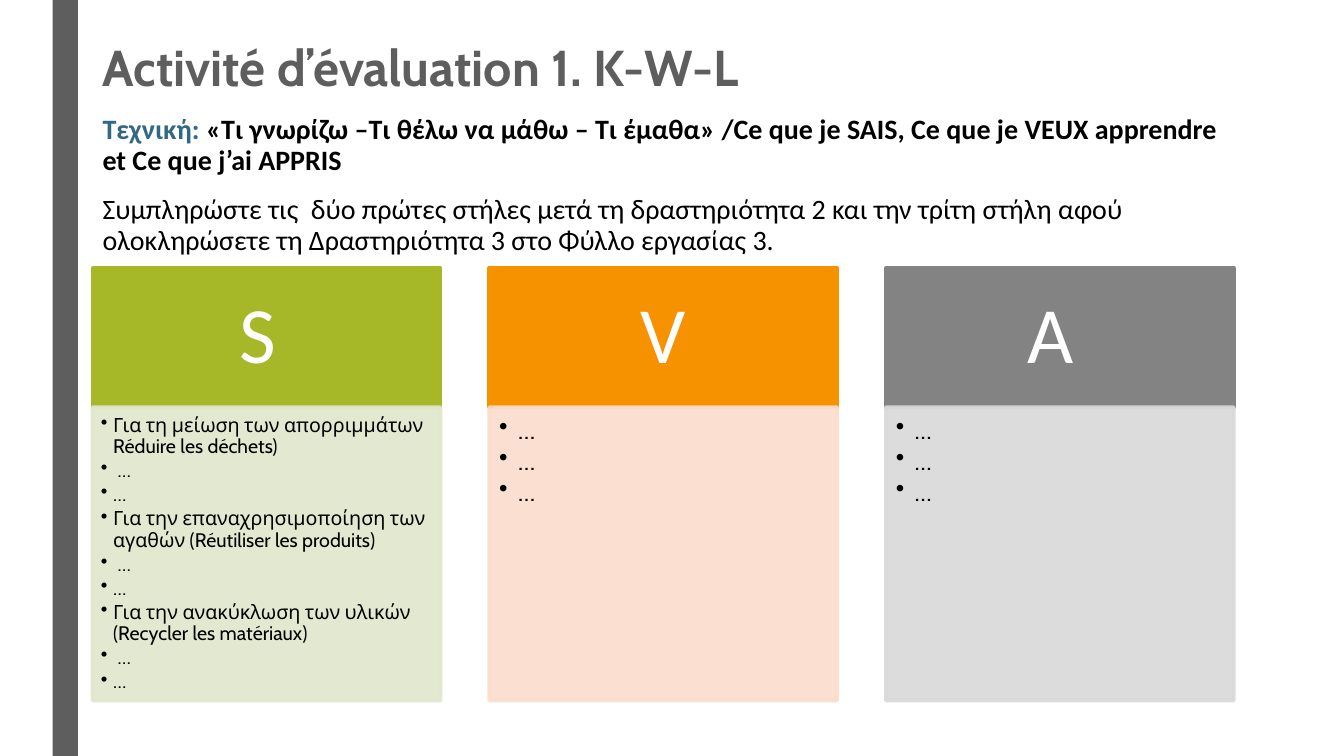
"""Builds a K-W-L assessment slide with three titled columns."""
from dataclasses import dataclass

from lxml.etree import SubElement
from pptx import Presentation
from pptx.dml.color import RGBColor
from pptx.enum.shapes import MSO_SHAPE
from pptx.enum.text import MSO_ANCHOR, PP_ALIGN
from pptx.oxml.ns import qn
from pptx.shapes.autoshape import Shape
from pptx.slide import Slide
from pptx.text.text import TextFrame, _Paragraph
from pptx.util import Pt


@dataclass(frozen=True)
class Theme:
    head: str = "Cabin"
    body: str = "Calibri"
    bar: str = "5E5E5E"
    key: str = "316886"
    ink: str = "000000"
    white: str = "FFFFFF"
    title: float = 36
    lead: float = 20
    letter: float = 57
    small: float = 14
    large: float = 18


@dataclass(frozen=True)
class Box:
    left: float
    top: float
    width: float
    height: float


@dataclass(frozen=True)
class Column:
    letter: str
    dark: str
    light: str
    items: tuple[str, ...]
    size: float
    indent: float
    inset: tuple[float, float, float, float]


THEME = Theme()
DOTS = ("…",) * 3
TOPICS = (
    "Για τη μείωση των απορριμμάτων Réduire les déchets)",
    "Για την επαναχρησιμοποίηση των αγαθών (Réutiliser les produits)",
    "Για την ανακύκλωση των υλικών (Recycler les matériaux)",
)
GOALS = tuple(line for topic in TOPICS for line in (topic, " …", "…"))
WIDE = (7.2, 7.2, 10.1, 11.5)
COLUMNS = (
    Column("S ", "A6B727", "E1E6CD", GOALS, THEME.small, 8.8, (5.8, 5.8, 7.9, 8.6)),
    Column("V", "F69200", "FBDCCC", DOTS, THEME.large, 13.5, WIDE),
    Column("A ", "838383", "D9D9D9", DOTS, THEME.large, 13.5, WIDE),
)
LEFT, STEP, WIDTH = 66.2, 283.3, 248.5
HEAD_TOP, HEAD_TALL, LIST_TALL = 191.5, 99.4, 209.5


def write(para: _Paragraph, text: str, *, size: float, font: str = THEME.body,
          color: str = THEME.ink, bold: bool = False) -> None:
    """Add a run of text in the given format."""
    run = para.add_run()
    run.text = text
    run.font.size = Pt(size)
    run.font.name = font
    run.font.bold = bold
    run.font.color.rgb = RGBColor.from_string(color)


def start(frame: TextFrame, line: float = 0.9, before: float = 0,
          after: float = 0, align: PP_ALIGN = PP_ALIGN.LEFT) -> _Paragraph:
    """Return the next free paragraph with its spacing set."""
    first = frame.paragraphs[0]
    para = frame.add_paragraph() if first.runs else first
    para.line_spacing = line
    para.space_before = Pt(before)
    para.space_after = Pt(after)
    para.alignment = align
    return para


def bullet(para: _Paragraph, indent: float) -> None:
    """Give a paragraph a hanging bullet."""
    para.level = 1
    props = para._p.get_or_add_pPr()
    props.set("marL", str(Pt(indent)))
    props.set("indent", str(-Pt(indent)))
    SubElement(props, qn("a:buChar")).set("char", "•")


def pad(frame: TextFrame, left: float, top: float, right: float, base: float) -> None:
    """Set wrapping and the four insets of a frame."""
    frame.word_wrap = True
    frame.margin_left, frame.margin_top = Pt(left), Pt(top)
    frame.margin_right, frame.margin_bottom = Pt(right), Pt(base)


def label(slide: Slide, box: Box) -> TextFrame:
    """Add a text box and return its frame."""
    shape = slide.shapes.add_textbox(
        Pt(box.left), Pt(box.top), Pt(box.width), Pt(box.height))
    pad(shape.text_frame, 7.2, 3.6, 7.2, 3.6)
    return shape.text_frame


def block(slide: Slide, box: Box, color: str, line: float = 0,
          alpha: int = 100) -> Shape:
    """Add a flat rectangle with an edge of the same colour."""
    shape = slide.shapes.add_shape(
        MSO_SHAPE.RECTANGLE, Pt(box.left), Pt(box.top), Pt(box.width), Pt(box.height))
    shape.shadow.inherit = False
    shape.fill.solid()
    shape.fill.fore_color.rgb = RGBColor.from_string(color)
    if line:
        shape.line.width = Pt(line)
        shape.line.color.rgb = RGBColor.from_string(color)
    else:
        shape.line.fill.background()
    if alpha < 100:
        for tint in list(shape._element.spPr.iter(qn("a:srgbClr"))):
            SubElement(tint, qn("a:alpha")).set("val", str(alpha * 1000))
    return shape


def draw(slide: Slide, col: Column, left: float) -> None:
    """Draw one column: its letter block and its list."""
    head = block(slide, Box(left, HEAD_TOP, WIDTH, HEAD_TALL), col.dark, 2.75).text_frame
    pad(head, 31.7, 18, 31.7, 18)
    head.vertical_anchor = MSO_ANCHOR.MIDDLE
    write(start(head, align=PP_ALIGN.CENTER), col.letter,
          size=THEME.letter, color=THEME.white)

    box = Box(left, HEAD_TOP + HEAD_TALL, WIDTH, LIST_TALL)
    body = block(slide, box, col.light, 2.75, 90).text_frame
    pad(body, *col.inset)
    body.vertical_anchor = MSO_ANCHOR.TOP
    for item in col.items:
        para = start(body, after=0.15 * col.size)
        bullet(para, col.indent)
        write(para, item, size=col.size, font=THEME.head)


def main() -> None:
    """Build the slide and save it."""
    deck = Presentation()
    deck.slide_width, deck.slide_height = Pt(960), Pt(540)
    slide = deck.slides.add_slide(deck.slide_layouts[6])
    block(slide, Box(37.6, 0, 18, 540), THEME.bar)

    title = label(slide, Box(LEFT, 28.8, 828, 43.2))
    title.vertical_anchor = MSO_ANCHOR.MIDDLE
    write(start(title, 0.89), "Activité d’évaluation 1. K-W-L",
          size=THEME.title, font=THEME.head, color=THEME.bar, bold=True)

    intro = label(slide, Box(LEFT, 77.8, 828, 373))
    para = start(intro, 0.94, 10, 2)
    write(para, "Τεχνική: ", size=THEME.lead, color=THEME.key, bold=True)
    write(para, "«Τι γνωρίζω –Τι θέλω να μάθω – Τι έμαθα» /Ce que je SAIS, "
          "Ce que je VEUX apprendre et Ce que j’ai APPRIS",
          size=THEME.lead, bold=True)
    write(start(intro, 0.94, 10, 2),
          "Συμπληρώστε τις  δύο πρώτες στήλες μετά τη δραστηριότητα 2 και την "
          "τρίτη στήλη αφού ολοκληρώσετε τη Δραστηριότητα 3 στο Φύλλο εργασίας 3.",
          size=THEME.lead)

    for place, col in enumerate(COLUMNS):
        draw(slide, col, LEFT + place * STEP)
    deck.save("out.pptx")


if __name__ == "__main__":
    main()
